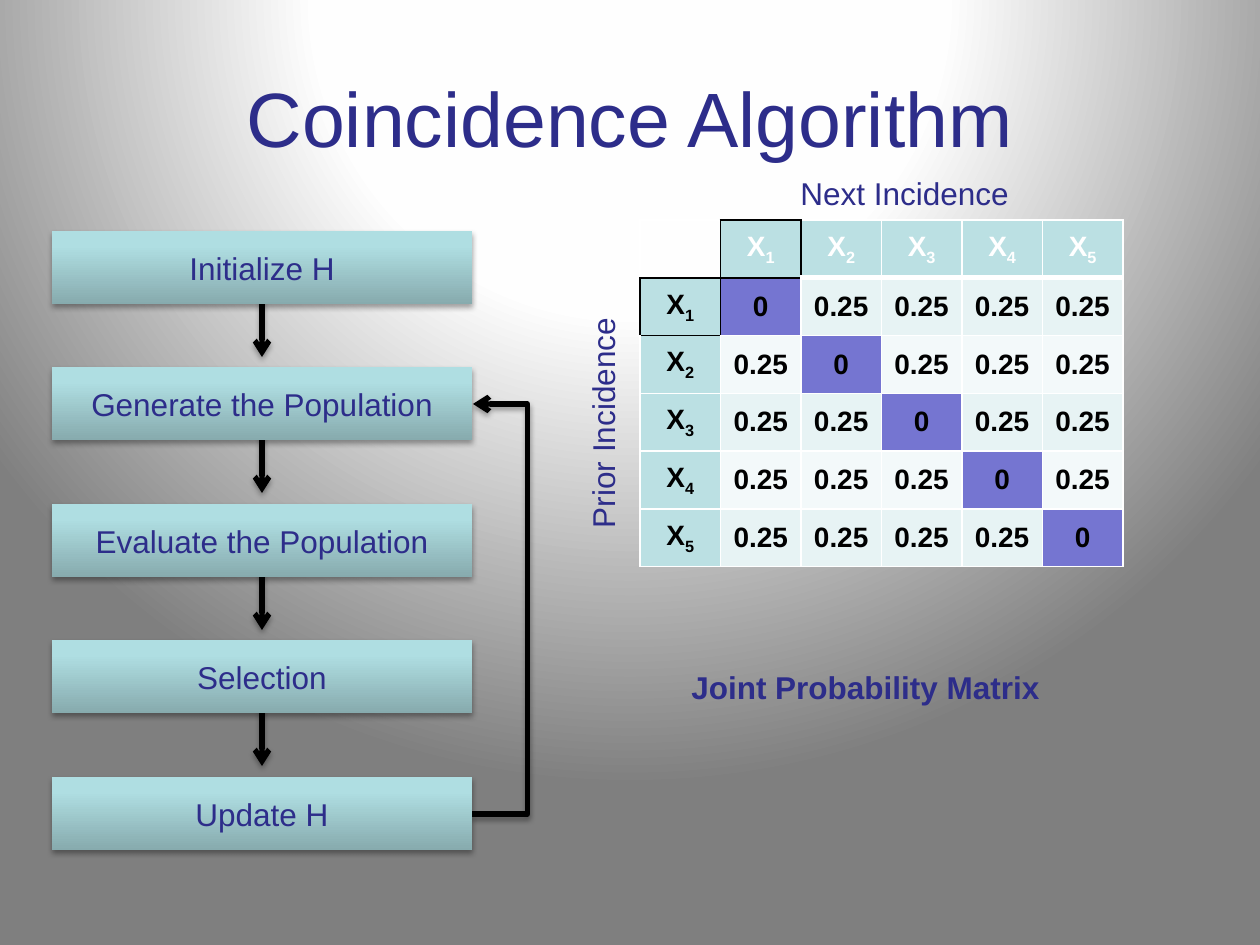
"""Builds the Coincidence Algorithm slide: a flow of five steps beside a joint probability matrix."""
from pptx import Presentation
from pptx.dml.color import RGBColor
from pptx.enum.shapes import MSO_CONNECTOR as LINK, MSO_SHAPE as SHAPE
from pptx.enum.text import MSO_ANCHOR as ANCHOR, MSO_AUTO_SIZE as AUTO, PP_ALIGN as ALIGN
from pptx.oxml import parse_xml
from pptx.oxml.ns import nsdecls, qn
from pptx.util import Pt

PX = 914400 / 126
NS = nsdecls("a")
INK = "2D2D8A"
SHADE = (
    f'<a:effectLst {NS}><a:outerShdw blurRad="40000" dist="23000" dir="5400000" rotWithShape="0">'
    '<a:srgbClr val="000000"><a:alpha val="35000"/></a:srgbClr></a:outerShdw></a:effectLst>'
)
hue = RGBColor.from_string


def blend(root, stops, path):
    marks = "".join(
        f'<a:gs pos="{pos}000"><a:srgbClr val="{tint}"/></a:gs>' for pos, tint in stops
    )
    old = root.find(".//" + qn("a:solidFill"))
    new = parse_xml(f'<a:gradFill {NS} rotWithShape="1"><a:gsLst>{marks}</a:gsLst>{path}</a:gradFill>')
    old.getparent().replace(old, new)


def write(frame, text, size, tint=INK, bold=False, sub="", align=ALIGN.CENTER):
    para = frame.paragraphs[0]
    para.alignment = align
    font = para.font
    font.name, font.size, font.bold = "Arial", Pt(size), bold
    font.color.rgb = hue(tint)
    for part in filter(None, (text, sub)):
        run = para.add_run()
        run.text = part
        run.font.name, run.font.size, run.font.bold = "Arial", Pt(size), bold
        run.font.color.rgb = hue(tint)
    if sub:
        run.font._element.set("baseline", "-25000")


deck = Presentation()
deck.slide_width, deck.slide_height = round(1260 * PX), round(945 * PX)
slide = deck.slides.add_slide(deck.slide_layouts[6])
shapes = slide.shapes

slide.background.fill.solid()
blend(
    slide.element,
    [(0, "FFFFFF"), (40, "FEFEFE"), (100, "7F7F7F")],
    '<a:path path="circle"><a:fillToRect l="50000" t="-80000" r="50000" b="180000"/></a:path>',
)

title = shapes.add_textbox(*(round(n * PX) for n in (63, 38, 1134, 157))).text_frame
title.word_wrap = True
title.vertical_anchor = ANCHOR.MIDDLE
write(title, "Coincidence Algorithm", 44)

steps = [
    "Initialize H",
    "Generate the Population",
    "Evaluate the Population",
    "Selection",
    "Update H",
]
tops = [231 + 273 * i // 2 for i in range(len(steps))]
left, wide, high = 52, 420, 73
mid, right = left + wide // 2, left + wide

links = [(LINK.STRAIGHT, mid, top + 63, mid, top + 126) for top in tops[:-1]]
links.append((LINK.ELBOW, right, tops[4] + 37, right + 1, tops[1] + 37))
for kind, *ends in links:
    link = shapes.add_connector(kind, *(round(n * PX) for n in ends))
    link.line.width = Pt(3)
    link.line.color.rgb = hue("000000")
    link.line._get_or_add_ln().append(parse_xml(f'<a:tailEnd {NS} type="arrow"/>'))
    props = link.element.spPr
    props.append(parse_xml(SHADE))
    if kind == LINK.ELBOW:
        guide = parse_xml(f'<a:gd {NS} name="adj1" fmla="val 5600000"/>')
        props.find(".//" + qn("a:avLst")).append(guide)

for step, top in zip(steps, tops):
    box = shapes.add_shape(SHAPE.RECTANGLE, *(round(n * PX) for n in (left, top, wide, high)))
    box.fill.solid()
    blend(
        box.element,
        [(0, "87ABAE"), (80, "AFDEE2"), (100, "AFE0E4")],
        '<a:lin ang="16200000" scaled="0"/>',
    )
    box.line.fill.background()
    box.element.spPr.append(parse_xml(SHADE))
    box.text_frame.vertical_anchor = ANCHOR.MIDDLE
    write(box.text_frame, step, 18)

count = 6
table = shapes.add_table(count, count, *(round(n * PX) for n in (640, 220, 483, 347))).table
table.first_row = table.horz_banding = False
dark = {(0, 1), (1, 0)}
sides = {"lnL": (0, -1), "lnR": (0, 1), "lnT": (-1, 0), "lnB": (1, 0)}
for row in range(count):
    for col in range(count):
        cell = table.cell(row, col)
        props = cell._tc.get_or_add_tcPr()
        for side, (down, over) in sides.items():
            black = dark & {(row, col), (row + down, col + over)}
            if not black and row == col == 0:
                continue
            tint = "000000" if black else "FFFFFF"
            width = 38100 if row == 0 and side == "lnB" and not black else 12700
            props.append(parse_xml(
                f'<a:{side} {NS} w="{width}"><a:solidFill><a:srgbClr val="{tint}"/>'
                f'</a:solidFill></a:{side}>'
            ))
        if row == col == 0:
            cell.fill.background()
            continue
        cell.vertical_anchor = ANCHOR.MIDDLE
        cell.margin_left = cell.margin_right = round(11 * PX)
        cell.margin_top = cell.margin_bottom = round(5 * PX)
        cell.fill.solid()
        if row == 0 or col == 0:
            back = "BBE0E3"
            tint = "000000" if row else "FFFFFF"
            write(cell.text_frame, "X", 16, tint, True, str(row or col))
        else:
            back = "7575D1" if row == col else "E7F3F4" if row % 2 else "F3F9FA"
            write(cell.text_frame, "0" if row == col else "0.25", 16, "000000", True)
        cell.fill.fore_color.rgb = hue(back)

notes = [
    ("Prior Incidence", (484, 397, 237, 50), 270, False),
    ("Next Incidence", (788, 168, 236, 50), 0, False),
    ("Joint Probability Matrix", (679, 662, 377, 50), 0, True),
]
for text, area, turn, bold in notes:
    note = shapes.add_textbox(*(round(n * PX) for n in area))
    note.rotation = turn
    note.text_frame.word_wrap = False
    note.text_frame.auto_size = AUTO.SHAPE_TO_FIT_TEXT
    write(note.text_frame, text, 18, bold=bold, align=ALIGN.LEFT)

deck.save("out.pptx")
